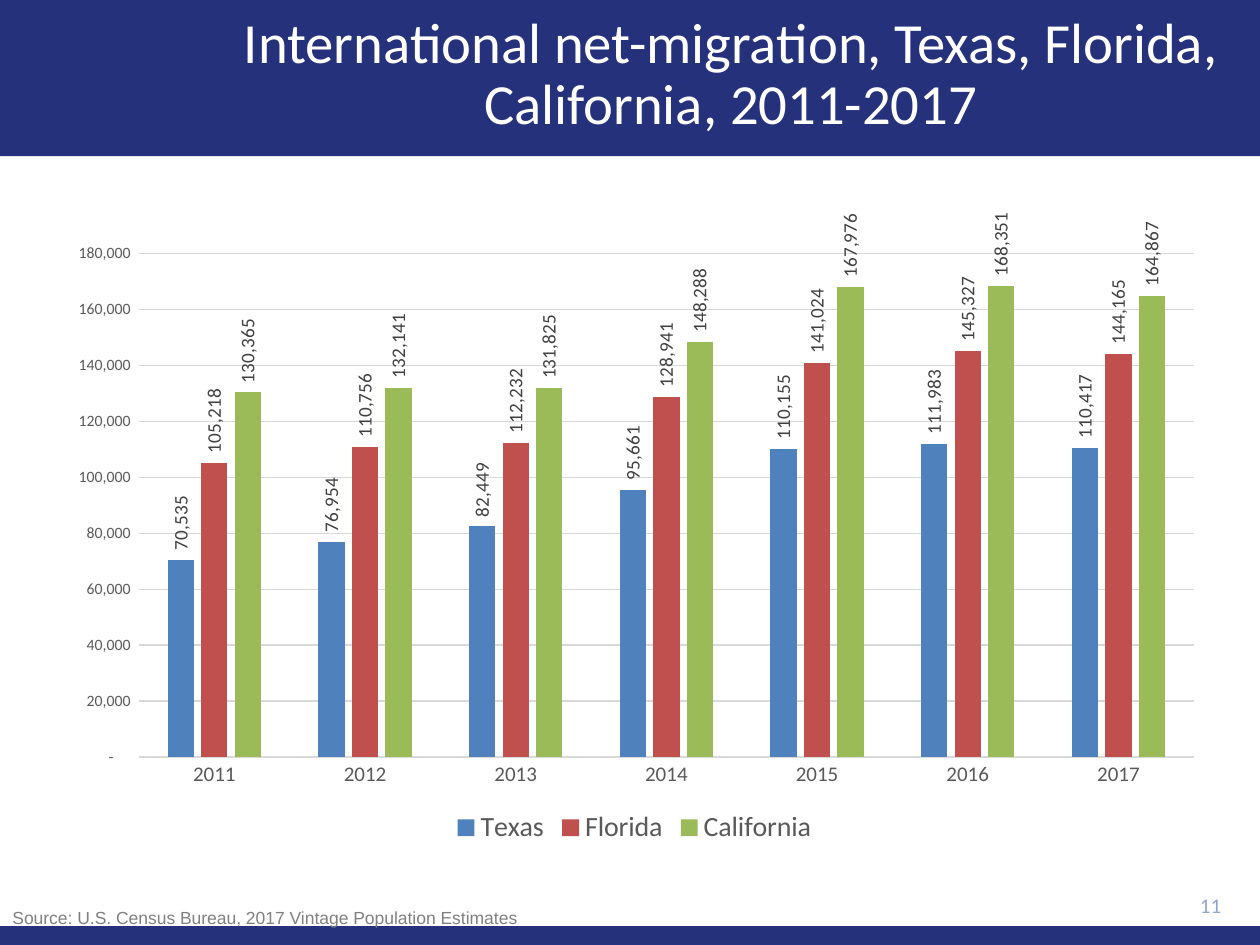
from lxml import etree
from pptx import Presentation
from pptx.chart import data as chart_data
from pptx.dml import color
from pptx.enum import chart as ch, shapes, text
from pptx.oxml import ns
from pptx.util import Pt

NAVY = "25327B"
GRAY = "595959"
GRID = "D9D9D9"
ACCOUNTING = r'_(* #,##0_);_(* \(#,##0\);_(* "-"??_);_('
YEARS = [str(year) for year in range(2011, 2018)]
MIGRATION = {
    "Texas": ("4F81BD", [70535, 76954, 82449, 95661, 110155, 111983, 110417]),
    "Florida": ("C0504D", [105218, 110756, 112232, 128941, 141024, 145327, 144165]),
    "California": ("9BBB59", [130365, 132141, 131825, 148288, 167976, 168351, 164867]),
}


def rgb(value):
    return color.RGBColor.from_string(value)


def set_font(font, size, hex_color, name="Calibri"):
    font.size, font.name, font.bold = Pt(size), name, False
    font.color.rgb = rgb(hex_color)


def set_line(line, hex_color):
    line.color.rgb = rgb(hex_color)
    line.width = Pt(0.75)


def set_plot_layout(chart, **fractions):
    plot_area = chart._chartSpace.chart.plotArea
    for old in plot_area.findall(ns.qn("c:layout")):
        plot_area.remove(old)
    layout = etree.Element(ns.qn("c:layout"))
    manual = etree.SubElement(layout, ns.qn("c:manualLayout"))
    settings = {"layoutTarget": "inner", "xMode": "edge", "yMode": "edge", **fractions}
    for tag, value in settings.items():
        etree.SubElement(manual, ns.qn(f"c:{tag}")).set("val", str(value))
    plot_area.insert(0, layout)


class SlideBuilder:
    def __init__(self, presentation):
        self.slide = presentation.slides.add_slide(presentation.slide_layouts[5])
        self.shapes = self.slide.shapes

    def band(self, top, height):
        band = self.shapes.add_shape(
            shapes.MSO_SHAPE.RECTANGLE, 0, Pt(top), Pt(720), Pt(height))
        band.shadow.inherit = False
        band.fill.solid()
        band.fill.fore_color.rgb = rgb(NAVY)
        band.line.fill.background()

    def title(self, wording, left, top, width, height):
        title = self.shapes.title
        title._element.getparent().append(title._element)
        title.left, title.top, title.width, title.height = map(
            Pt, (left, top, width, height))
        frame = title.text_frame
        frame.text = wording
        frame.word_wrap = True
        frame.auto_size = text.MSO_AUTO_SIZE.NONE
        frame.vertical_anchor = text.MSO_ANCHOR.MIDDLE
        paragraph = frame.paragraphs[0]
        paragraph.alignment = text.PP_ALIGN.CENTER
        paragraph.line_spacing = 0.9
        set_font(paragraph.runs[0].font, 32.4, "FFFFFF")

    def label(self, wording, box, size, hex_color, font, align, anchor, wrap):
        frame = self.shapes.add_textbox(*map(Pt, box)).text_frame
        frame.text = wording
        frame.word_wrap = wrap
        frame.vertical_anchor = anchor
        paragraph = frame.paragraphs[0]
        paragraph.alignment = align
        set_font(paragraph.runs[0].font, size, hex_color, font)

    def column_chart(self, categories, table, box):
        data = chart_data.CategoryChartData(number_format=ACCOUNTING)
        data.categories = categories
        for name, (_, values) in table.items():
            data.add_series(name, values)
        chart = self.shapes.add_chart(
            ch.XL_CHART_TYPE.COLUMN_CLUSTERED, *map(Pt, box), data).chart
        set_font(chart.font, 10, "000000")
        chart.has_title = False
        chart.has_legend = True
        chart.legend.position = ch.XL_LEGEND_POSITION.BOTTOM
        chart.legend.include_in_layout = False
        set_font(chart.legend.font, 16, GRAY)
        self.axes(chart)
        plot = chart.plots[0]
        plot.gap_width, plot.overlap = 219, -27
        plot.vary_by_categories = False
        for series in plot.series:
            series.format.fill.solid()
            series.format.fill.fore_color.rgb = rgb(table[series.name][0])
            self.upright_labels(series.data_labels)
        set_plot_layout(chart, x=0.075, y=0.067, w=0.905, h=0.787)

    def axes(self, chart):
        years, people = chart.category_axis, chart.value_axis
        for axis, size in ((years, 12), (people, 9)):
            axis.major_tick_mark = axis.minor_tick_mark = ch.XL_TICK_MARK.NONE
            set_font(axis.tick_labels.font, size, GRAY)
        set_line(years.format.line, GRID)
        people.format.line.fill.background()
        set_line(people.major_gridlines.format.line, GRID)
        people.minimum_scale, people.maximum_scale = 0, 180000
        people.major_unit = 20000
        people.tick_labels.number_format = ACCOUNTING
        people.tick_labels.number_format_is_linked = False

    def upright_labels(self, labels):
        labels.show_value = True
        labels.position = ch.XL_LABEL_POSITION.OUTSIDE_END
        labels.number_format = ACCOUNTING
        labels.number_format_is_linked = False
        set_font(labels.font, 11, "404040")
        body = labels._element.find(f"{ns.qn('c:txPr')}/{ns.qn('a:bodyPr')}")
        body.set("rot", "-5400000")
        body.set("vert", "horz")


def main():
    presentation = Presentation()
    presentation.slide_width, presentation.slide_height = Pt(720), Pt(540)
    page = SlideBuilder(presentation)
    page.band(0, 89.28)
    page.band(529.2, 10.8)
    page.title("International net-migration, Texas, Florida, California, 2011-2017",
               122.4, 7.2, 590.4, 72)
    page.label("11", (640.8, 504.72, 64.08, 24.48), 12, "8FA5D1", "Calibri",
               text.PP_ALIGN.RIGHT, text.MSO_ANCHOR.MIDDLE, True)
    page.label("Source: U.S. Census Bureau, 2017 Vintage Population Estimates",
               (0, 514.8, 313.2, 19.44), 10, "808080", "Arial",
               text.PP_ALIGN.LEFT, text.MSO_ANCHOR.TOP, False)
    page.column_chart(YEARS, MIGRATION, (29.52, 118.8, 666, 367.2))
    presentation.save("out.pptx")


if __name__ == "__main__":
    main()
